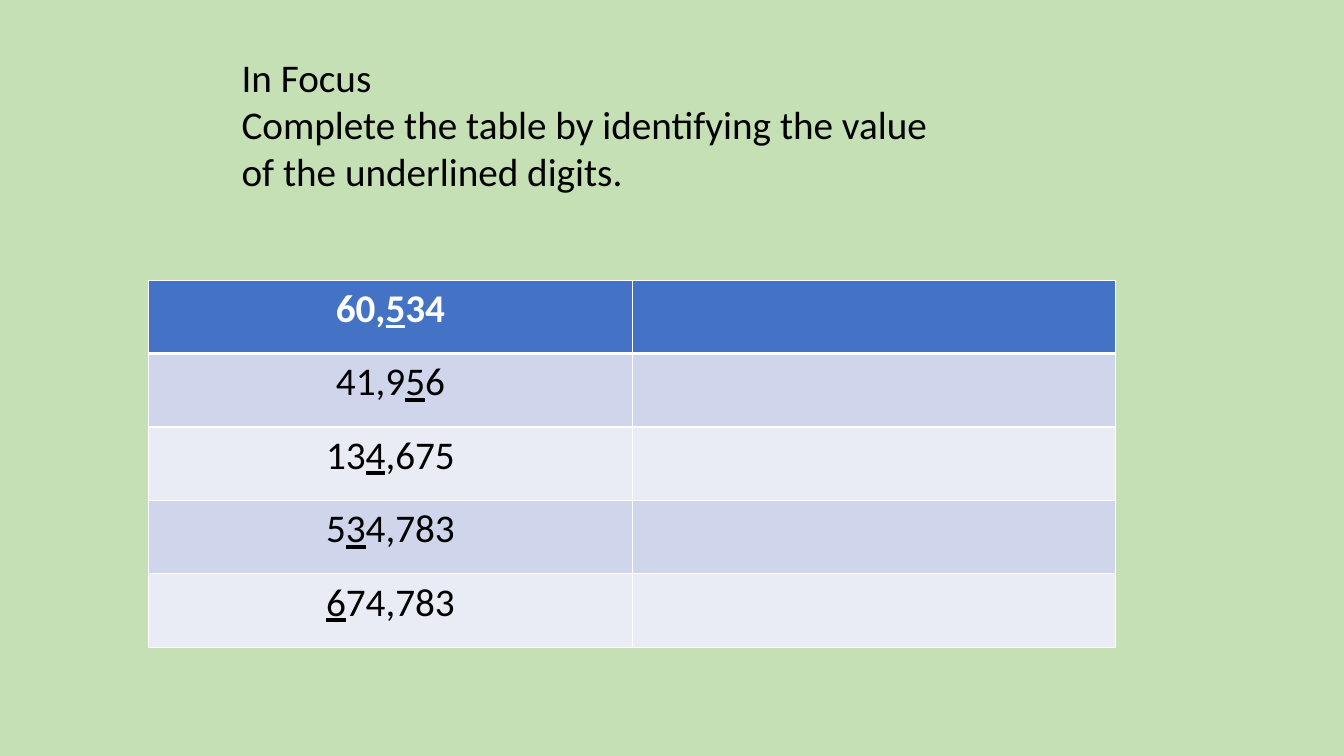
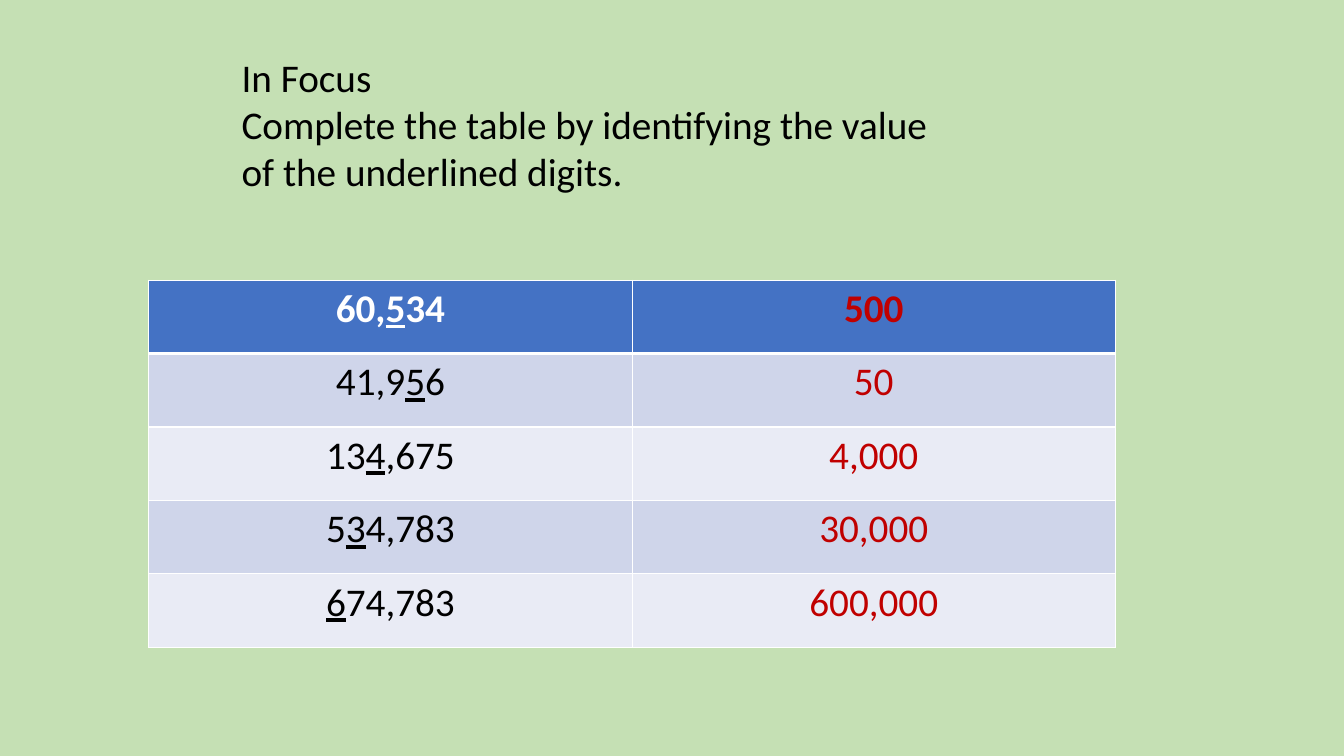
from dataclasses import dataclass

from lxml import etree
from pptx import Presentation
from pptx import util as u
from pptx.dml.color import RGBColor
from pptx.enum import text
from pptx.oxml import ns


@dataclass(frozen=True)
class Theme:
    background: str = "C5E0B4"
    header: str = "4472C4"
    bands: tuple = ("CFD5EA", "E9EBF5")
    border: str = "FFFFFF"
    header_text: str = "FFFFFF"
    body_text: str = "000000"
    answer: str = "C00000"
    font: str = "Calibri"
    size: int = 28


class Deck:
    """Holds the style and the current slide."""

    def __init__(self, theme):
        self.theme = theme
        self.prs = Presentation()
        self.prs.slide_width, self.prs.slide_height = u.Cm(33.87), u.Cm(19.05)
        self.s = None

    def slide(self):
        self.s = self.prs.slides.add_slide(self.prs.slide_layouts[6])
        self.paint(self.s.background.fill, self.theme.background)

    def paint(self, fill, colour):
        fill.solid()
        fill.fore_color.rgb = RGBColor.from_string(colour)

    def style(self, p, colour, bold=False):
        p.font.name, p.font.size = self.theme.font, u.Pt(self.theme.size)
        p.font.bold = bold
        p.font.color.rgb = RGBColor.from_string(colour)

    def text_box(self, left, top, width, height, lines):
        tf = self.s.shapes.add_textbox(
            u.Cm(left), u.Cm(top), u.Cm(width), u.Cm(height)).text_frame
        tf.word_wrap = True
        tf.auto_size = text.MSO_AUTO_SIZE.SHAPE_TO_FIT_TEXT
        tf.text = "\n".join(lines)
        for p in tf.paragraphs:
            self.style(p, self.theme.body_text)

    def borders(self, cell, bottom):
        tc_pr = cell._tc.get_or_add_tcPr()
        for side, width in (("L", 1), ("R", 1), ("T", 1), ("B", bottom)):
            ln = etree.SubElement(tc_pr, ns.qn(f"a:ln{side}"), w=str(u.Pt(width)))
            fill = etree.SubElement(ln, ns.qn("a:solidFill"))
            etree.SubElement(fill, ns.qn("a:srgbClr"), val=self.theme.border)

    def cell(self, cell, parts, fill, colour, is_header):
        """Fill a cell; every second part of its text is underlined."""
        self.borders(cell, bottom=3 if is_header else 1)
        self.paint(cell.fill, fill)
        p = cell.text_frame.paragraphs[0]
        p.alignment = text.PP_ALIGN.CENTER
        self.style(p, colour, bold=is_header)
        for i, part in enumerate(parts):
            if part:
                r = p.add_run()
                r.text = part
                if i % 2:
                    r.font.underline = True

    def table(self, left, top, width, row_height, rows, show_answers):
        t = self.theme
        table = self.s.shapes.add_table(
            len(rows), 2, u.Cm(left), u.Cm(top),
            u.Cm(width), u.Cm(row_height * len(rows))).table
        for i, (number, value) in enumerate(rows):
            is_header = i == 0
            fill = t.header if is_header else t.bands[(i - 1) % 2]
            colour = t.header_text if is_header else t.body_text
            self.cell(table.cell(i, 0), number.split("_"), fill, colour, is_header)
            answer = [value] if show_answers else []
            self.cell(table.cell(i, 1), answer, fill, t.answer, is_header)


# Underscores enclose the underlined digit
ROWS = [
    ("60,_5_34", "500"),
    ("41,9_5_6", "50"),
    ("13_4_,675", "4,000"),
    ("5_3_4,783", "30,000"),
    ("_6_74,783", "600,000"),
]
TASK = ["In Focus",
        "Complete the table by identifying the value of the underlined digits."]


def main():
    deck = Deck(Theme())
    # The question first, then the same slide with its answers
    for show_answers in (False, True):
        deck.slide()
        deck.table(3.75, 7.06, 24.36, 1.85, ROWS, show_answers)
        deck.text_box(5.84, 1.22, 18.16, 3.84, TASK)
    deck.prs.save("out.pptx")


if __name__ == "__main__":
    main()
